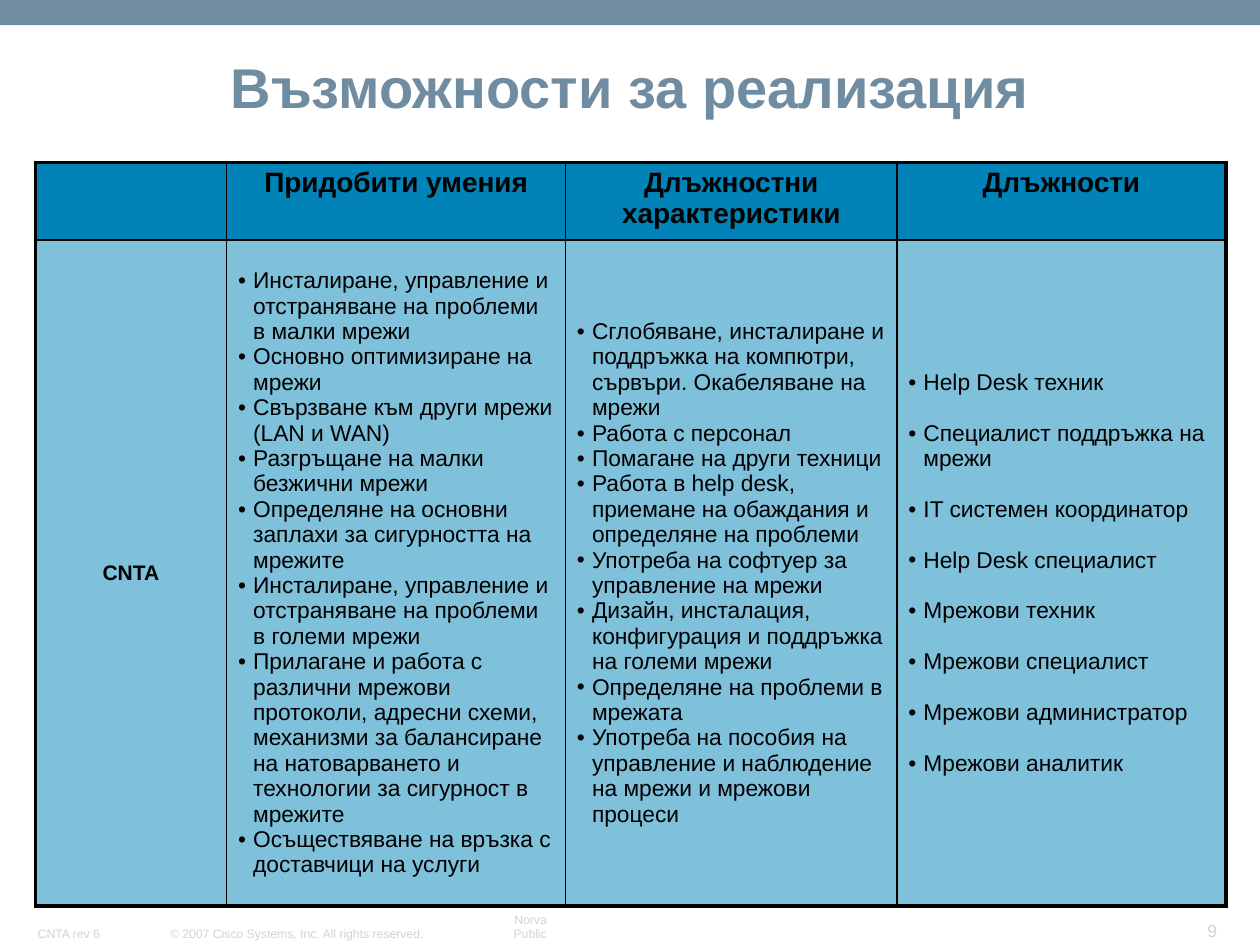
from lxml.etree import SubElement
from pptx import Presentation
from pptx.dml.color import RGBColor
from pptx.enum.shapes import MSO_SHAPE
from pptx.enum.text import MSO_ANCHOR, PP_ALIGN
from pptx.oxml.ns import qn
from pptx.util import Inches, Pt

COLORS = {"slate": "708CA1", "footer": "D3D3D3", "blue": "0183B7", "ink": "000000"}
GRID_COLUMNS, GRID_ROWS = 100, 75
THIN, THICK = 1, 2.25
BODY_SIZE, ENTRY_GAP = 13, 14.5

HEADINGS = ["", "Придобити умения", "Длъжностни характеристики", "Длъжности"]
SKILLS = [
    "Инсталиране, управление и отстраняване на проблеми в малки мрежи",
    "Основно оптимизиране на мрежи",
    "Свързване към други мрежи (LAN и WAN)",
    "Разгръщане на малки безжични мрежи",
    "Определяне на основни заплахи за сигурността на мрежите",
    "Инсталиране, управление и отстраняване на проблеми в големи мрежи",
    "Прилагане и работа с различни мрежови протоколи, адресни схеми, механизми "
    "за балансиране на натоварването и технологии за сигурност в мрежите",
    "Осъществяване на връзка с доставчици на услуги",
]
DUTIES = [
    "Сглобяване, инсталиране и поддръжка на компютри, сървъри. Окабеляване на мрежи",
    "Работа с персонал",
    "Помагане на други техници",
    "Работа в help desk, приемане на обаждания и определяне на проблеми",
    "Употреба на софтуер за управление на мрежи",
    "Дизайн, инсталация, конфигурация и поддръжка на големи мрежи",
    "Определяне на проблеми в мрежата",
    "Употреба на пособия на управление и наблюдение на мрежи и мрежови процеси",
]
POSITIONS = [
    "Help Desk техник",
    "Специалист поддръжка на мрежи",
    "IT системен координатор",
    "Help Desk специалист",
    "Мрежови техник",
    "Мрежови специалист",
    "Мрежови администратор",
    "Мрежови аналитик",
]


class SlideBuilder:
    font_name = "Arial"

    def __init__(self, presentation):
        self.slide = presentation.slides.add_slide(presentation.slide_layouts[6])
        self.column = presentation.slide_width / GRID_COLUMNS
        self.row = presentation.slide_height / GRID_ROWS

    def place(self, left, top, width, height):
        return (round(left * self.column), round(top * self.row),
                round(width * self.column), round(height * self.row))

    def paint(self, fill, color, alpha=None):
        fill.solid()
        fill.fore_color.rgb = RGBColor.from_string(COLORS[color])
        if alpha:
            tint = fill._xPr.find(qn("a:solidFill"))[0]
            SubElement(tint, qn("a:alpha"), val=str(alpha * 1000))

    def style(self, paragraph, size, color, bold=False, align=PP_ALIGN.LEFT):
        paragraph.alignment = align
        font = paragraph.font
        font.name, font.size, font.bold = self.font_name, Pt(size), bold
        font.color.rgb = RGBColor.from_string(COLORS[color])

    def inset(self, target):
        target.margin_left = target.margin_right = Inches(0.09)
        target.margin_top = target.margin_bottom = Inches(0.04)

    def band(self, area, color):
        shape = self.slide.shapes.add_shape(MSO_SHAPE.RECTANGLE, *self.place(*area))
        shape.shadow.inherit = False
        self.paint(shape.fill, color)
        shape.line.fill.background()

    def text(self, area, wording, size, color, wrap=False, spacing=None, **look):
        frame = self.slide.shapes.add_textbox(*self.place(*area)).text_frame
        frame.word_wrap = wrap
        frame.vertical_anchor = MSO_ANCHOR.BOTTOM
        self.inset(frame)
        paragraph = frame.paragraphs[0]
        paragraph.text = wording
        paragraph.line_spacing = spacing
        self.style(paragraph, size, color, **look)

    def table(self, area, widths, heights):
        grid = self.slide.shapes.add_table(
            len(heights), len(widths), *self.place(*area)).table
        for column, width in zip(grid.columns, widths):
            column.width = round(width * self.column)
        for row, height in zip(grid.rows, heights):
            row.height = round(height * self.row)
        for r in range(len(heights)):
            for c in range(len(widths)):
                cell = grid.cell(r, c)
                self.inset(cell)
                self.borders(cell, {"L": c == 0, "R": c == len(widths) - 1,
                                    "T": r == 0, "B": r == len(heights) - 1})
                self.paint(cell.fill, "blue", 50 if r else None)
        return grid

    def borders(self, cell, outer_sides):
        properties = cell._tc.get_or_add_tcPr()
        for side, outer in outer_sides.items():
            line = SubElement(properties, qn(f"a:ln{side}"),
                              w=str(Pt(THICK if outer else THIN)))
            SubElement(SubElement(line, qn("a:solidFill")), qn("a:srgbClr"),
                       val=COLORS["ink"])

    def label(self, cell, wording, size, anchor=MSO_ANCHOR.TOP):
        cell.text = wording
        cell.vertical_anchor = anchor
        self.style(cell.text_frame.paragraphs[0], size, "ink", True, PP_ALIGN.CENTER)

    def bullets(self, cell, entries, gap=0):
        cell.vertical_anchor = MSO_ANCHOR.MIDDLE
        cell.text = "\n".join(entries)
        for index, paragraph in enumerate(cell.text_frame.paragraphs):
            properties = paragraph._p.get_or_add_pPr()
            properties.set("marL", str(Inches(0.12)))
            properties.set("indent", str(-Inches(0.12)))
            SubElement(properties, qn("a:buFont"), typeface=self.font_name)
            SubElement(properties, qn("a:buChar"), char="•")
            if index and gap:
                paragraph.space_before = Pt(gap)
            self.style(paragraph, BODY_SIZE, "ink")


def main():
    presentation = Presentation()
    presentation.slide_width, presentation.slide_height = Inches(10), Inches(7.5)
    page = SlideBuilder(presentation)

    page.band((0, 0, 100, 2), "slate")
    page.text((12.6, 73, 22.1, 2.1),
              "© 2007 Cisco Systems, Inc. All rights reserved.", 7, "footer")
    page.text((37.2, 73, 7.1, 2.1), "Norva Public", 7, "footer", align=PP_ALIGN.RIGHT)
    page.text((2.1, 73, 10.5, 2.1), "CNTA rev 6", 7, "footer", wrap=True)
    page.text((94, 72.5, 3.5, 2.6), "9", 10, "footer", align=PP_ALIGN.RIGHT)
    page.text((0, 4.2, 100, 5.8), "Възможности за реализация", 32, "slate",
              wrap=True, spacing=0.9, bold=True, align=PP_ALIGN.CENTER)

    careers = page.table((2.8, 12.9, 94.5, 57.8), (15.2, 26.9, 26.3, 26.1), (5.7, 52.1))
    for column, heading in enumerate(HEADINGS):
        page.label(careers.cell(0, column), heading, 16)
    page.label(careers.cell(1, 0), "CNTA", 12, MSO_ANCHOR.MIDDLE)
    page.bullets(careers.cell(1, 1), SKILLS)
    page.bullets(careers.cell(1, 2), DUTIES)
    page.bullets(careers.cell(1, 3), POSITIONS, ENTRY_GAP)

    presentation.save("out.pptx")


if __name__ == "__main__":
    main()
